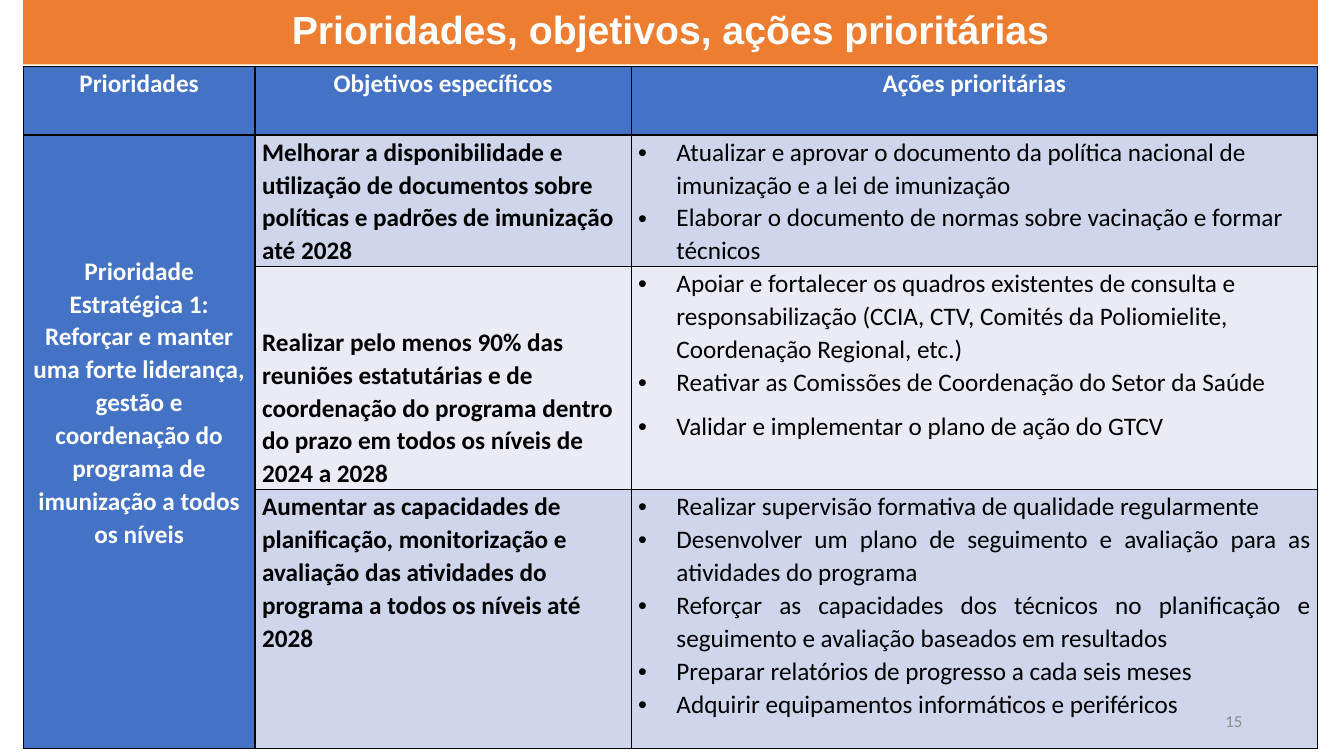
from lxml.etree import SubElement
from pptx import Presentation
from pptx.dml.color import RGBColor
from pptx.enum.text import MSO_ANCHOR as Anchor, MSO_AUTO_SIZE as AutoSize, PP_ALIGN as Align
from pptx.oxml.ns import qn
from pptx.util import Pt

PX = 9144  # 100 px to the inch
BLUE, BAND_DARK, BAND_LIGHT = "4472C4", "CFD5EA", "E9EBF5"
WHITE, BLACK = "FFFFFF", "000000"

COLUMNS = [230, 373, 681]
ROWS = [68, 128, 217, 257]
HEADERS = ["Prioridades", "Objetivos específicos", "Ações prioritárias"]
PRIORITY = ("Prioridade Estratégica 1: Reforçar e manter uma forte liderança, "
            "gestão e coordenação do programa de imunização a todos os níveis")
# Band colour, space above the objective, objective, actions (text, alignment, space after)
OBJECTIVES = [
    (BAND_DARK, 0,
     "Melhorar a disponibilidade e utilização de documentos sobre políticas "
     "e padrões de imunização até 2028",
     [("Atualizar e aprovar o documento da política nacional de imunização "
       "e a lei de imunização", Align.LEFT, 0),
      ("Elaborar o documento de normas sobre vacinação e formar técnicos", Align.LEFT, 0)]),
    (BAND_LIGHT, 58,
     "Realizar pelo menos 90% das reuniões estatutárias e de coordenação do "
     "programa dentro do prazo em todos os níveis de 2024 a 2028",
     [("Apoiar e fortalecer os quadros existentes de consulta e responsabilização "
       "(CCIA, CTV, Comités da Poliomielite, Coordenação Regional, etc.)", Align.LEFT, 0),
      ("Reativar as Comissões de Coordenação do Setor da Saúde", Align.JUSTIFY, 8),
      ("Validar e implementar o plano de ação do GTCV", Align.JUSTIFY, 8)]),
    (BAND_DARK, 0,
     "Aumentar as capacidades de planificação, monitorização e avaliação das "
     "atividades do programa a todos os níveis até 2028",
     [(action, Align.JUSTIFY, 0) for action in (
         "Realizar supervisão formativa de qualidade regularmente",
         "Desenvolver um plano de seguimento e avaliação para as atividades do programa",
         "Reforçar as capacidades dos técnicos no planificação e seguimento e "
         "avaliação baseados em resultados",
         "Preparar relatórios de progresso a cada seis meses",
         "Adquirir equipamentos informáticos e periféricos")]),
]


def px(value):
    return int(value * PX)


def colour(value):
    return RGBColor.from_string(value)


def style_font(paragraph, size, hex_colour, bold=False, name="Calibri"):
    font = paragraph.font
    font.name, font.size, font.bold = name, Pt(size), bold
    font.color.rgb = colour(hex_colour)


def style_cell(cell, fill, top=0):
    """Black borders, fill and margins."""
    properties = cell._tc.get_or_add_tcPr()
    for side in ("lnL", "lnR", "lnT", "lnB"):
        line = SubElement(properties, qn(f"a:{side}"), w=str(Pt(1)))
        SubElement(SubElement(line, qn("a:solidFill")), qn("a:srgbClr"), val=BLACK)
    cell.fill.solid()
    cell.fill.fore_color.rgb = colour(fill)
    cell.margin_left = cell.margin_right = px(7)
    cell.margin_top, cell.margin_bottom = px(top), 0


def write_bold(cell, text, hex_colour, align):
    paragraph = cell.text_frame.paragraphs[0]
    paragraph.text = text
    paragraph.alignment = align
    paragraph.line_spacing = 1.07
    paragraph.space_before, paragraph.space_after = Pt(12), Pt(8)
    style_font(paragraph, 18, hex_colour, bold=True)


def write_actions(cell, actions):
    frame = cell.text_frame
    for index, (text, align, after) in enumerate(actions):
        paragraph = frame.add_paragraph() if index else frame.paragraphs[0]
        paragraph.text = text
        paragraph.alignment = align
        paragraph.line_spacing = 1.07
        paragraph.space_before, paragraph.space_after = Pt(0), Pt(after)
        style_font(paragraph, 18, BLACK)
        properties = paragraph._p.get_or_add_pPr()
        properties.set("marL", str(px(38)))
        properties.set("indent", str(-px(38)))
        SubElement(properties, qn("a:buFont"), typeface="Arial")
        SubElement(properties, qn("a:buChar"), char="•")


def add_title(slide, left, top, width, height):
    title = slide.shapes.title
    title.left, title.top, title.width, title.height = map(px, (left, top, width, height))
    title.fill.solid()
    title.fill.fore_color.rgb = colour("ED7D31")
    frame = title.text_frame
    frame.auto_size = AutoSize.NONE
    frame.vertical_anchor = Anchor.MIDDLE
    paragraph = frame.paragraphs[0]
    paragraph.text = "Prioridades, objetivos, ações prioritárias"
    paragraph.alignment = Align.CENTER
    paragraph.line_spacing = 0.9
    style_font(paragraph, 28, WHITE, bold=True, name="Arial")


def add_priorities_table(slide, left, top):
    table = slide.shapes.add_table(len(ROWS), len(COLUMNS), px(left), px(top),
                                   px(sum(COLUMNS)), px(sum(ROWS))).table
    table.horz_banding = False
    for column, width in zip(table.columns, COLUMNS):
        column.width = px(width)
    for row, height in zip(table.rows, ROWS):
        row.height = px(height)

    # Header row
    for index, header in enumerate(HEADERS):
        cell = table.cell(0, index)
        style_cell(cell, BLUE)
        write_bold(cell, header, WHITE, Align.CENTER)

    # Objectives and their actions
    for row, (band, space, objective, actions) in enumerate(OBJECTIVES, 1):
        priority_cell, objective_cell, actions_cell = (table.cell(row, i) for i in range(3))
        style_cell(priority_cell, BLUE, top=118 if row == 1 else 0)
        style_cell(objective_cell, band, top=space)
        style_cell(actions_cell, band)
        write_bold(objective_cell, objective, BLACK, Align.LEFT)
        write_actions(actions_cell, actions)

    # Priority shared by all objectives
    table.cell(1, 0).merge(table.cell(len(OBJECTIVES), 0))
    write_bold(table.cell(1, 0), PRIORITY, WHITE, Align.CENTER)


def add_page_number(slide, left, top, width, height):
    frame = slide.shapes.add_textbox(*map(px, (left, top, width, height))).text_frame
    frame.word_wrap = True
    frame.vertical_anchor = Anchor.MIDDLE
    paragraph = frame.paragraphs[0]
    paragraph.text = "15"
    paragraph.alignment = Align.RIGHT
    style_font(paragraph, 12, "8C8C8C")


def main():
    presentation = Presentation()
    presentation.slide_width, presentation.slide_height = px(1333), px(750)
    slide = presentation.slides.add_slide(presentation.slide_layouts[5])
    add_title(slide, 23, 0, 1284, 64)
    add_priorities_table(slide, 23, 66)
    add_page_number(slide, 942, 695, 300, 40)
    presentation.save("out.pptx")


if __name__ == "__main__":
    main()
